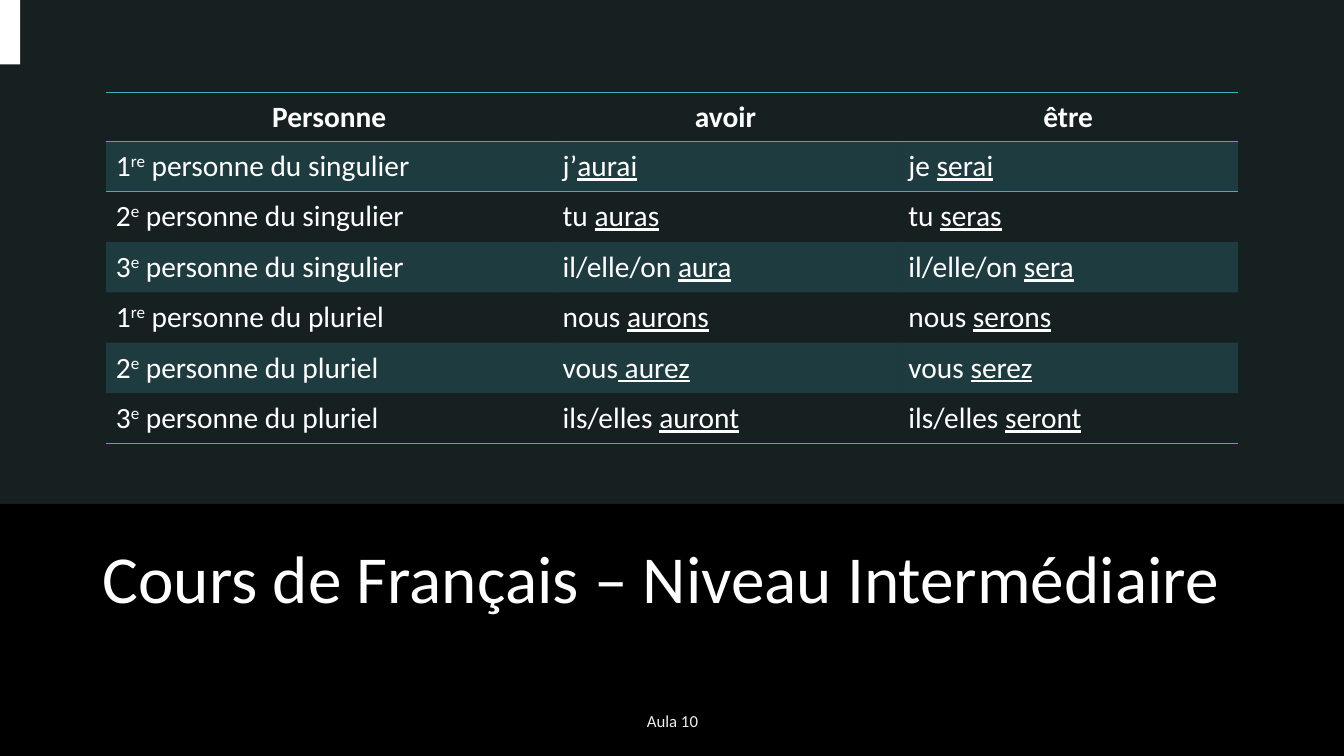
"""Build a French lesson slide with the future tense of avoir and être."""
from lxml.etree import SubElement
from pptx import Presentation
from pptx.dml.color import RGBColor
from pptx.enum.shapes import MSO_SHAPE as SHAPE
from pptx.enum.text import MSO_ANCHOR as ANCHOR, PP_ALIGN as ALIGN
from pptx.oxml import parse_xml
from pptx.oxml.ns import nsdecls, qn
from pptx.util import Inches, Pt

WHITE, BLACK, TEAL, PALE = "FFFFFF", "000000", "41AEBD", "94D7E4"
PLAIN_STYLE = "{2D5ABB26-0587-4C30-8999-92F81FD0307C}"


def paint(fill, color, holder=None, alpha=100):
    fill.solid()
    fill.fore_color.rgb = RGBColor.from_string(color)
    if alpha < 100:
        clr = next(holder.iter(qn("a:srgbClr")))
        SubElement(clr, qn("a:alpha"), val=str(alpha * 1000))


def write(p, text, size=21, color=WHITE, bold=False, underline=False, raised=False):
    r = p.add_run()
    r.text = text
    r.font.name = "Calibri"
    r.font.size = Pt(size)
    r.font.bold = bold
    r.font.underline = underline
    paint(r.font.fill, color)
    if raised:
        r.font._element.set("baseline", "30000")


prs = Presentation()
prs.slide_width, prs.slide_height = Inches(13.33), Inches(7.5)
s = prs.slides.add_slide(prs.slide_layouts[6])
paint(s.background.fill, BLACK)

panels = [
    (0, 0, 13.33, 5, PALE, 15),
    (0, 5, 13.33, 2.5, BLACK, 100),
    (0, -0.15, 0.2, 0.79, WHITE, 100),
]
for *box, color, alpha in panels:
    sp = s.shapes.add_shape(SHAPE.RECTANGLE, *map(Inches, box))
    sp.shadow.inherit = False
    sp.line.fill.background()
    paint(sp.fill, color, sp.element, alpha)

captions = [
    ((0.92, 5.36, 11.5, 1.4), "Cours de Français – Niveau Intermédiaire", 48, WHITE,
     ALIGN.LEFT, ANCHOR.TOP, 0.9),
    ((4.42, 6.95, 4.5, 0.4), "Aula 10", 12, "EDEDED", ALIGN.CENTER, ANCHOR.MIDDLE, 1.0),
]
for box, text, size, color, align, anchor, spacing in captions:
    tf = s.shapes.add_textbox(*map(Inches, box)).text_frame
    tf.word_wrap = True
    tf.vertical_anchor = anchor
    p = tf.paragraphs[0]
    p.alignment = align
    p.line_spacing = spacing
    write(p, text, size=size, color=color)

headers = ["Personne", "avoir", "être"]
forms = [
    (("j’", "aurai"), ("je ", "serai")),
    (("tu ", "auras"), ("tu ", "seras")),
    (("il/elle/on ", "aura"), ("il/elle/on ", "sera")),
    (("nous ", "aurons"), ("nous ", "serons")),
    (("vous", " aurez"), ("vous ", "serez")),
    (("ils/elles ", "auront"), ("ils/elles ", "seront")),
]
ordinals = [("1", "re"), ("2", "e"), ("3", "e")]

frame = s.shapes.add_table(7, 3, Inches(1.05), Inches(0.92), Inches(11.23), Inches(3.5))
next(frame.element.iter(qn("a:tableStyleId"))).text = PLAIN_STYLE
table = frame.table
table.horz_banding = False
for column, width in zip(table.columns, (4.43, 3.43, 3.37)):
    column.width = Inches(width)

for i, row in enumerate(table.rows):
    row.height = Inches(0.5 if i else 0.48)
    for j, cell in enumerate(row.cells):
        cell.vertical_anchor = ANCHOR.MIDDLE
        cell.margin_top = cell.margin_bottom = Inches(0.05 if i else 0.04)
        p = cell.text_frame.paragraphs[0]
        if i == 0:
            p.alignment = ALIGN.CENTER
            write(p, headers[j], bold=True)
        elif j == 0:
            number, suffix = ordinals[(i - 1) % 3]
            write(p, number)
            write(p, suffix, raised=True)
            write(p, " personne du " + ("singulier" if i <= 3 else "pluriel"))
        else:
            pronoun, verb = forms[i - 1][j - 1]
            write(p, pronoun)
            write(p, verb, underline=True)

        tc_pr = cell._tc.get_or_add_tcPr()
        if i % 2:
            paint(cell.fill, TEAL, tc_pr, 20)
        else:
            cell.fill.background()
        edges = {0: ["lnT", "lnB"], 1: ["lnT"], 6: ["lnB"]}.get(i, [])
        for k, edge in enumerate(edges):
            tc_pr.insert(k, parse_xml(
                f'<a:{edge} {nsdecls("a")} w="12700"><a:solidFill>'
                f'<a:srgbClr val="{TEAL}"/></a:solidFill></a:{edge}>'))

prs.save("out.pptx")
